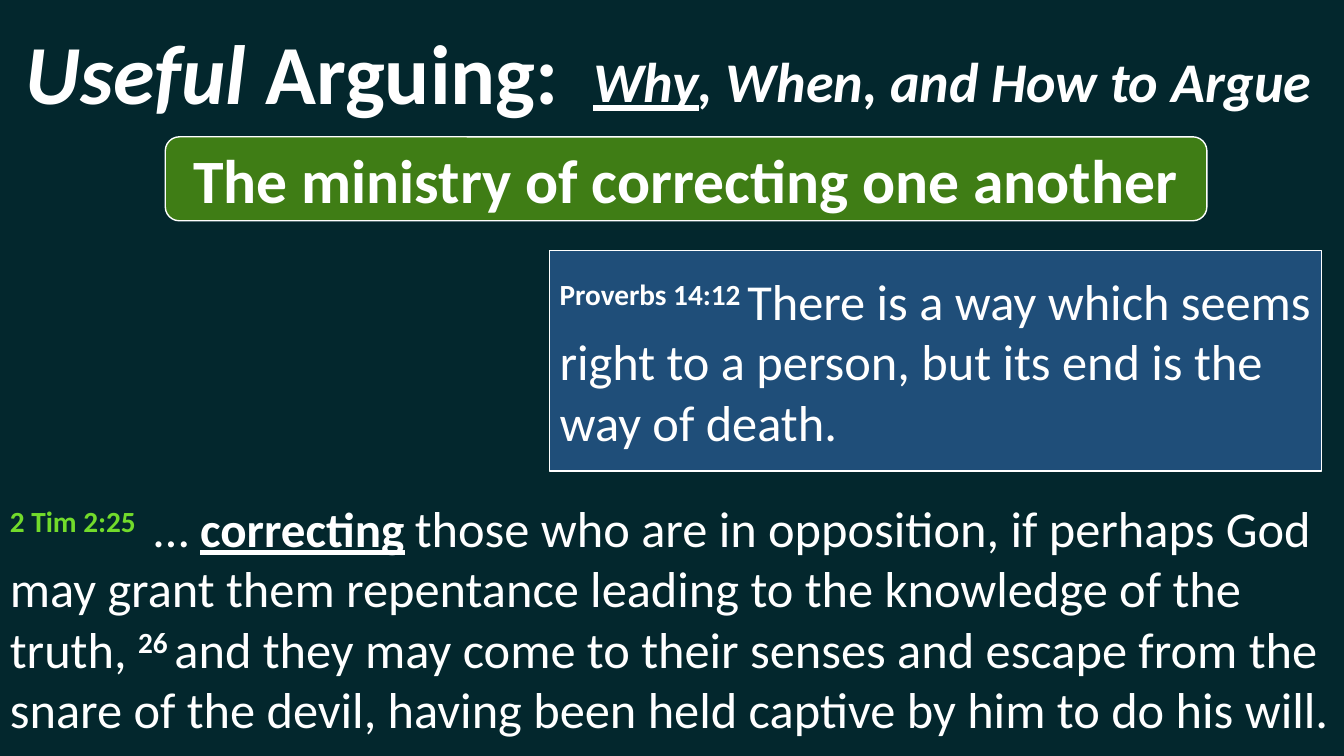
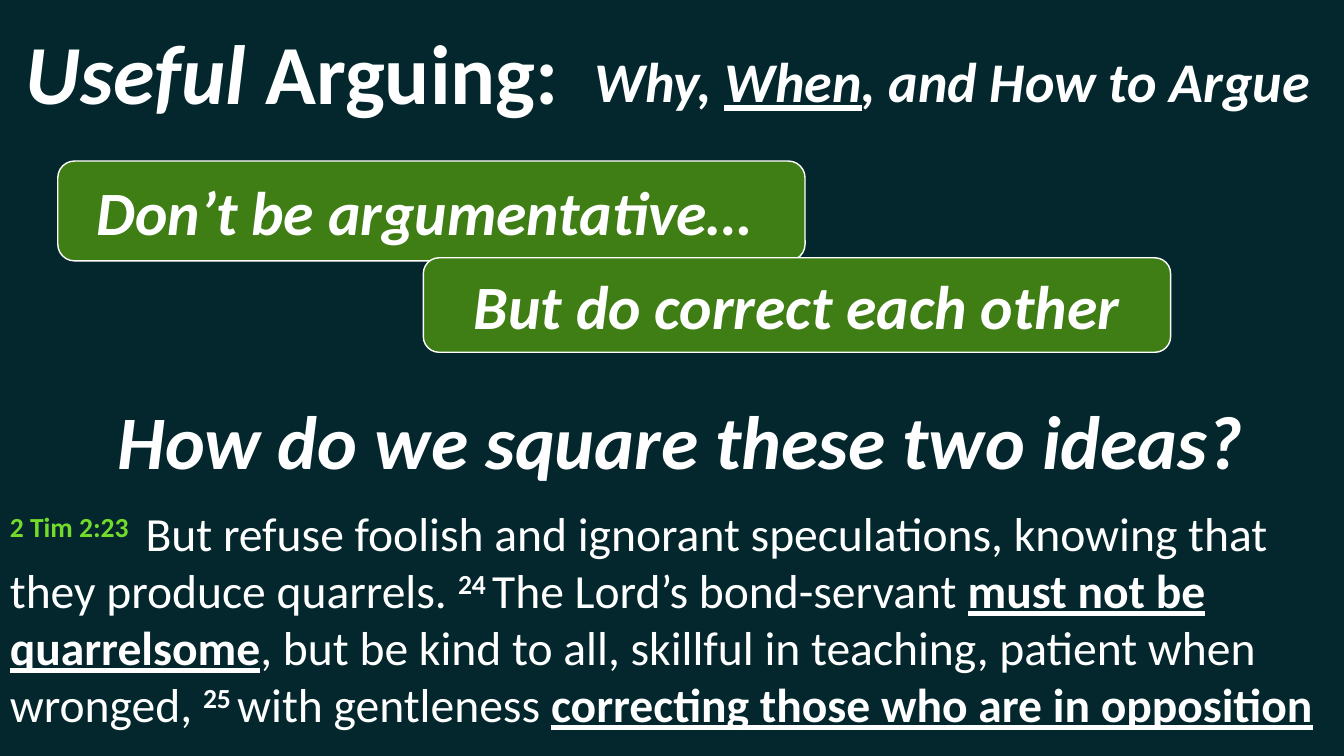
from pptx import Presentation
from pptx import util as u
from pptx.dml.color import RGBColor
from pptx.enum import shapes, text

COLOURS = {"ground": "03272D", "white": "FFFFFF", "lime": "72DB2B",
           "green": "3F7D15", "blue": "1F4E79"}
FONT = "Calibri"
BOLD = {"bold": True}
BOLD_ITALIC = {"bold": True, "italic": True}
UPRIGHT = {"italic": False}
UNDERLINED = {"underline": True}
STRESSED = {"bold": True, "underline": True}
VERSE = {"bold": True, "raised": True}
REFERENCE = {**VERSE, "colour": "lime"}
LEFT, CENTRE = text.PP_ALIGN.LEFT, text.PP_ALIGN.CENTER
TOP, MIDDLE = text.MSO_ANCHOR.TOP, text.MSO_ANCHOR.MIDDLE


def colour(name):
    return RGBColor.from_string(COLOURS[name])


class Sermon:
    def __init__(self):
        self.deck = Presentation()
        self.deck.slide_width = u.Inches(13.33)
        self.deck.slide_height = u.Inches(7.5)
        ground = self.deck.slide_master.background.fill
        ground.solid()
        ground.fore_color.rgb = colour("ground")
        self.page = None

    def area(self, left, top, width, height):
        across, down = self.deck.slide_width, self.deck.slide_height
        return [int(percent * whole / 100) for percent, whole in
                zip((left, top, width, height), (across, down, across, down))]

    def letter(self, box, spans, size, align=CENTRE, anchor=TOP, **look):
        frame = box.text_frame
        settings = {"word_wrap": True, "auto_size": text.MSO_AUTO_SIZE.NONE,
                    "vertical_anchor": anchor}
        for key, value in settings.items():
            setattr(frame, key, value)
        para = frame.paragraphs[0]
        para.alignment = align
        for words, change in spans:
            style = {"name": FONT, "size": size, "colour": "white", **look, **change}
            span = para.add_run()
            span.text = words
            span.font.color.rgb = colour(style.pop("colour"))
            if style.pop("raised", False):
                span.font._element.set("baseline", "30000")
            style["size"] = u.Pt(style["size"])
            for key, value in style.items():
                setattr(span.font, key, value)

    def start(self, topics):
        self.page = self.deck.slides.add_slide(self.deck.slide_layouts[5])
        title = self.page.shapes.title
        place = self.area(0.2, 2.1, 43.1, 14.8)
        for key, value in zip(("left", "top", "width", "height"), place):
            setattr(title, key, value)
        self.letter(title, [("Useful ", {}), ("Arguing:", UPRIGHT)], 60, **BOLD_ITALIC)
        self.label((42.4, 5.5, 56.9, 10.3), topics, 40)

    def label(self, share, spans, size):
        box = self.page.shapes.add_textbox(*self.area(*share))
        self.letter(box, spans, size, **BOLD_ITALIC)

    def panel(self, share, fill, spans, size, kind=shapes.MSO_SHAPE.RECTANGLE,
              outlined=True, **look):
        box = self.page.shapes.add_shape(kind, *self.area(*share))
        box.shadow.inherit = False
        box.fill.solid()
        box.fill.fore_color.rgb = colour(fill)
        if outlined:
            box.line.color.rgb = colour("white")
            box.line.width = u.Pt(1)
        else:
            box.line.fill.background()
        self.letter(box, spans, size, anchor=MIDDLE, **look)

    def passage(self, spans, size):
        self.panel((0, 63.5, 100, 36.5), "ground", spans, size,
                   outlined=False, align=LEFT)

    def pill(self, share, words, **look):
        self.panel(share, "green", [(words, {})], 44,
                   shapes.MSO_SHAPE.ROUNDED_RECTANGLE, **look)


def ministry(sermon):
    sermon.start([("Why", UNDERLINED), (", When, and How to Argue", {})])
    sermon.passage([
        ("2 Tim 2:25 ", REFERENCE),
        (" … ", {}),
        ("correcting", {**STRESSED, "size": 35}),
        (" ", {"size": 32}),
        ("those who are in opposition, if perhaps God may grant them repentance "
         "leading to the knowledge of the truth, ", {}),
        ("26 ", VERSE),
        ("and they may come to their senses and escape from the snare of the devil, "
         "having been held captive by him to do his will.", {}),
    ], 36)
    sermon.panel((40.9, 33.1, 57.45, 29.2), "blue", [
        ("Proverbs 14:12 ", VERSE),
        ("There is a way which seems right to a person, but its end is the way "
         "of death.", {}),
    ], 36, align=LEFT)
    sermon.pill((12.3, 18.1, 77.5, 11.1), "The ministry of correcting one another", **BOLD)


def two_ideas(sermon):
    sermon.start([("Why, ", {}), ("When", UNDERLINED), (", and How to Argue", {})])
    sermon.passage([
        ("2 Tim 2:23 ", REFERENCE),
        (" But refuse foolish and ignorant speculations, knowing that "
         "they produce quarrels. ", {}),
        ("24 ", VERSE),
        ("The Lord’s bond-servant ", {}),
        ("must not be quarrelsome", STRESSED),
        (", but be kind to all, skillful in teaching, patient when wronged, ", {}),
        ("25 ", VERSE),
        ("with gentleness ", {}),
        ("correcting those who are in opposition", STRESSED),
    ], 34)
    sermon.label((4.3, 51.5, 93.9, 13.5), [("How do we square these two ideas? ", {})], 54)
    sermon.pill((4.3, 21.3, 55.6, 13.2), "Don’t be argumentative… ", **BOLD_ITALIC)
    sermon.pill((31.5, 34.1, 55.6, 12.5), "But do correct each other", **BOLD_ITALIC)


def main():
    sermon = Sermon()
    ministry(sermon)
    two_ideas(sermon)
    sermon.deck.save("out.pptx")


if __name__ == "__main__":
    main()
